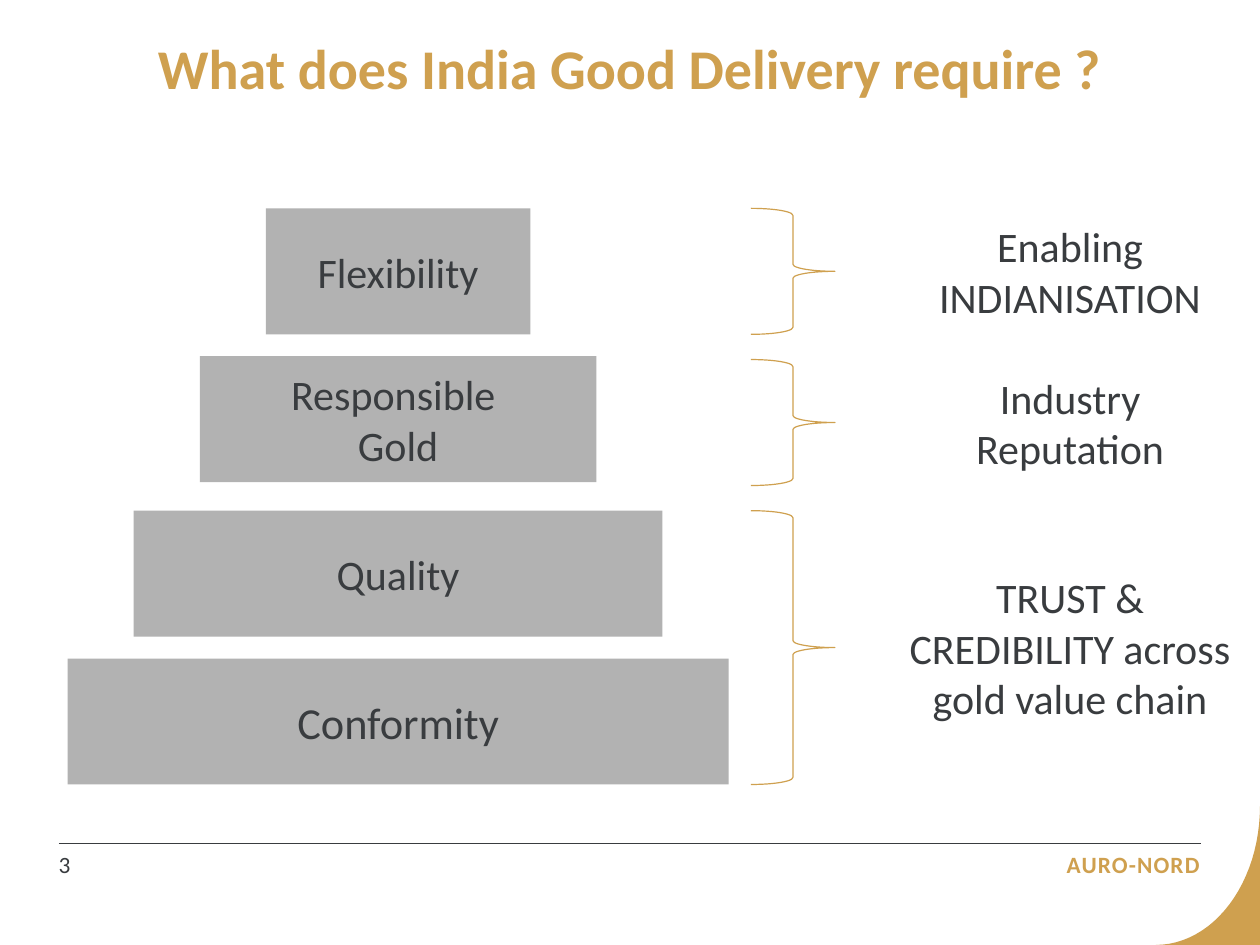
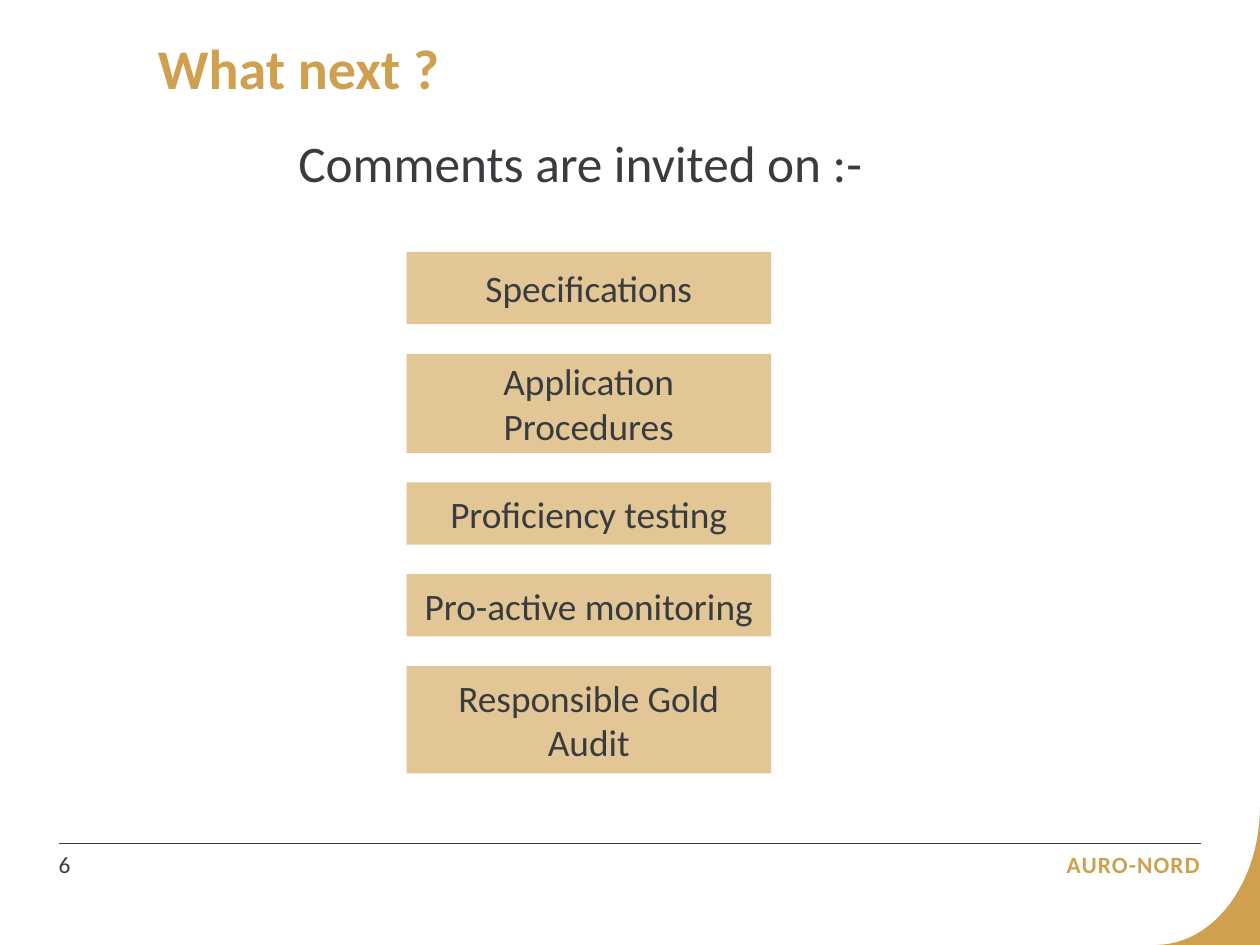
import math
import dataclasses
import pptx
import pptx.util
import pptx.dml.color
import pptx.enum.shapes
import pptx.enum.text
import pptx.oxml
import pptx.oxml.ns

SHAPE = pptx.enum.shapes.MSO_SHAPE
ALIGN = pptx.enum.text.PP_ALIGN
ANCHOR = pptx.enum.text.MSO_ANCHOR

COLS, ROWS = 75, 56.25
UNIT = 0.1  # inches in one column or row


@dataclasses.dataclass(frozen=True)
class Theme:
    font: str = "Calibri"
    gold: str = "CFA04F"
    sand: str = "E2C695"
    grey: str = "B2B2B2"
    ink: str = "393C3F"
    title: int = 24
    lead: int = 22
    base: int = 19
    text: int = 18
    item: int = 16
    foot: int = 10
    line: float = 0.5


THEME = Theme()


def grid(*cells):
    """Turn columns and rows into lengths."""
    return [pptx.util.Inches(cell * UNIT) for cell in cells]


def color(code):
    return pptx.dml.color.RGBColor.from_string(code)


def write(frame, text, size=THEME.text, ink=THEME.ink, bold=False,
          align=ALIGN.CENTER, anchor=ANCHOR.MIDDLE, inset=True, space=0):
    """Fill a text frame; each line of text is a paragraph, space is in points."""
    frame.text = text
    frame.word_wrap = True
    frame.auto_size = pptx.enum.text.MSO_AUTO_SIZE.NONE
    frame.vertical_anchor = anchor
    if not inset:
        frame.margin_left = frame.margin_right = 0
        frame.margin_top = frame.margin_bottom = 0
    for para in frame.paragraphs:
        para.alignment = align
        for run in para.runs:
            font = run.font
            font.name, font.size, font.bold = THEME.font, pptx.util.Pt(size), bold
            font.color.rgb = color(ink)
            if space:
                run._r.get_or_add_rPr().set("spc", str(round(space * 100)))


class Deck:
    def __init__(self):
        self.show = pptx.Presentation()
        self.show.slide_width, self.show.slide_height = grid(COLS, ROWS)
        self.slide = None

    def page(self, title, number):
        """Start a slide with its title and footer."""
        layout = self.show.slide_layouts.get_by_name("Title Only")
        self.slide = self.show.slides.add_slide(layout)
        self.corner()
        self.rule(3.5, 71.5, 50.2)
        foot = dict(size=THEME.foot, anchor=ANCHOR.TOP, inset=False)
        self.label("AURO-NORD", 55.5, 50.6, 15.9, 2, ink=THEME.gold,
                   bold=True, align=ALIGN.RIGHT, space=0.5, **foot)
        self.label(str(number), 3.5, 50.6, 4.7, 2, align=ALIGN.LEFT, **foot)
        head = self.slide.shapes.title
        head.left, head.top, head.width, head.height = grid(8.4, 1.5, 66, 5)
        write(head.text_frame, title, size=THEME.title, ink=THEME.gold,
              bold=True, align=ALIGN.LEFT, anchor=ANCHOR.TOP)

    def paint(self, shape, fill=None, line=None):
        shape.shadow.inherit = False
        if fill:
            shape.fill.solid()
            shape.fill.fore_color.rgb = color(fill)
        else:
            shape.fill.background()
        if line:
            shape.line.color.rgb = color(line)
            shape.line.width = pptx.util.Pt(THEME.line)
        else:
            shape.line.fill.background()

    def corner(self):
        """Fill the bottom right corner outside a quarter ellipse."""
        wide, high, steps = 6.2, 8.25, 24
        left, top = COLS - wide, ROWS - high
        arc = []
        for step in range(steps + 1):
            turn = math.pi / 2 * (1 - step / steps)
            arc.append(grid(left + wide * math.cos(turn),
                            top + high * math.sin(turn)))
        path = self.slide.shapes.build_freeform(*grid(COLS, ROWS))
        path.add_line_segments(arc, close=True)
        self.paint(path.convert_to_shape(), fill=THEME.gold)

    def rule(self, start, end, row):
        line = self.slide.shapes.add_connector(
            pptx.enum.shapes.MSO_CONNECTOR.STRAIGHT, *grid(start, row, end, row))
        line.line.color.rgb = color(THEME.ink)
        line.line.width = pptx.util.Pt(THEME.line)
        props = line._element.spPr
        props.append(pptx.oxml.parse_xml(
            "<a:effectLst %s/>" % pptx.oxml.ns.nsdecls("a")))

    def label(self, text, left, top, wide, high, **style):
        box = self.slide.shapes.add_textbox(*grid(left, top, wide, high))
        write(box.text_frame, text, **style)

    def block(self, text, left, top, wide, high, fill, **style):
        box = self.slide.shapes.add_shape(
            SHAPE.RECTANGLE, *grid(left, top, wide, high))
        self.paint(box, fill=fill)
        write(box.text_frame, text, **style)

    def brace(self, left, top, wide, high):
        mark = self.slide.shapes.add_shape(
            SHAPE.RIGHT_BRACE, *grid(left, top, wide, high))
        self.paint(mark, line=THEME.gold)


def needs(deck):
    deck.page("What does India Good Delivery require ?", 3)
    center, step, high = 23.7, 7.87, 7.5
    tiers = [("Flexibility", 12.4, THEME.text),
             ("Responsible \nGold", 21.2, THEME.text),
             ("Quality", 30.4, THEME.text),
             ("Conformity", 39.2, THEME.base)]
    for rank, (name, top, size) in enumerate(tiers, 2):
        half = rank * step / 2 * 1
        wide = 2 * half
        deck.block(name, center - half, top, wide, high, THEME.grey, size=size)
    goals = [("Enabling INDIANISATION", 12.4, high),
             ("Industry Reputation", 21.4, high),
             ("TRUST & CREDIBILITY across gold value chain", 30.4, 16.3)]
    for goal, top, tall in goals:
        deck.brace(44.7, top, 5, tall)
        deck.label(goal, 53, top, 21.4, tall)


def plans(deck):
    deck.page("What next ?", 6)
    deck.label("Comments are invited on :-", 14, 7.3, 41.1, 5,
               size=THEME.lead, anchor=ANCHOR.TOP)
    top, gap = 15, 1.76
    for name, high in [("Specifications", 4.3), ("Application Procedures", 5.9),
                       ("Proficiency testing", 3.7),
                       ("Pro-active monitoring", 3.7),
                       ("Responsible Gold Audit", 6.4)]:
        deck.block(name, 24.2, top, 21.7, high, THEME.sand, size=THEME.item)
        top += high + gap


def main():
    deck = Deck()
    needs(deck)
    plans(deck)
    deck.show.save("out.pptx")


if __name__ == "__main__":
    main()
